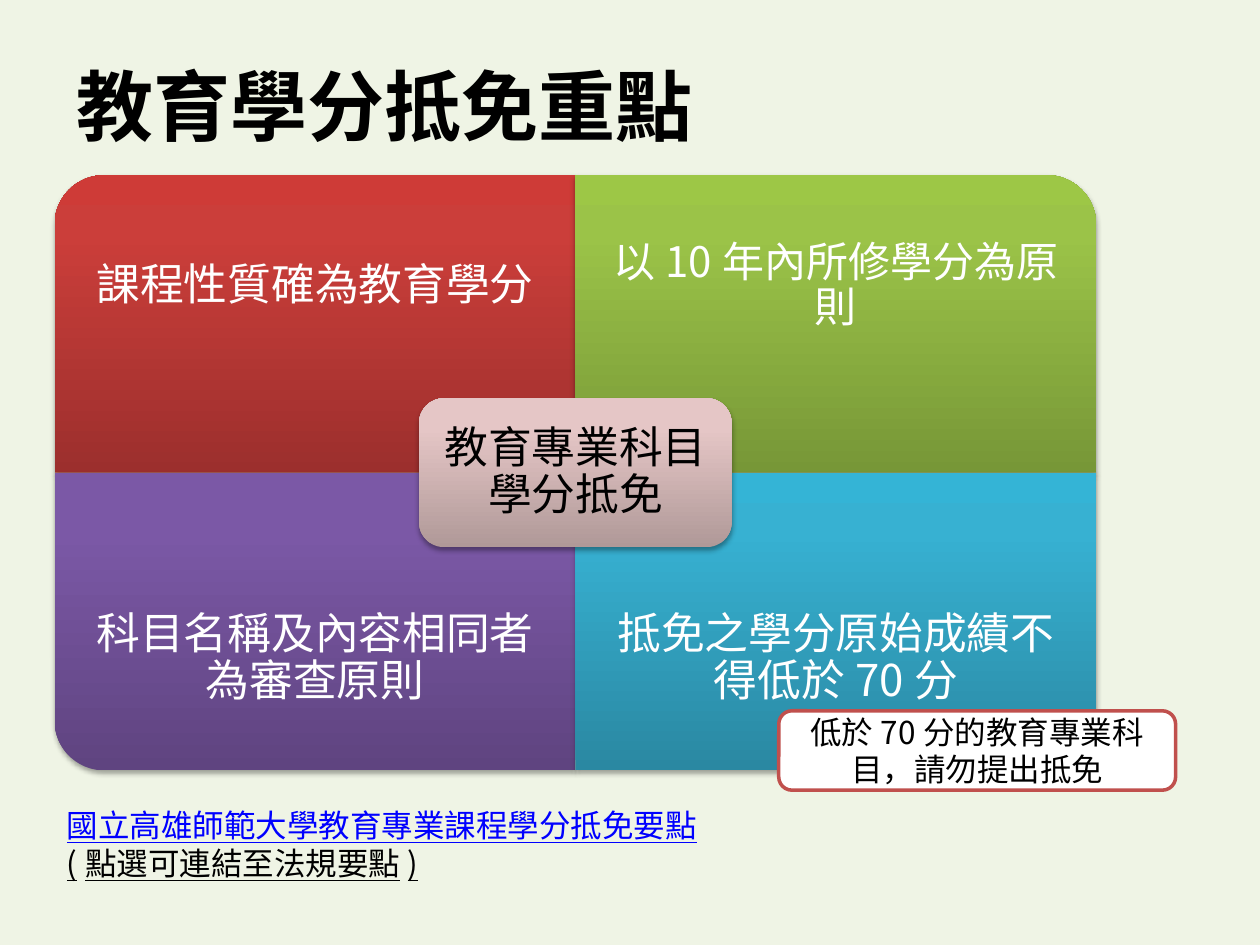
from lxml import etree
from pptx import Presentation
from pptx import util as u
from pptx.dml.color import RGBColor
from pptx.enum import shapes, text
from pptx.oxml import ns

FONT = "Noto Sans CJK SC"
COLORS = {
    "background": "EFF4E5", "black": "000000", "white": "FFFFFF",
    "link": "0000FF", "border": "C0504D",
}
GRADIENTS = {
    "red": ("9C2F2D", "CB3E3A", "CE3B37"),
    "green": ("779737", "9BC348", "9DC746"),
    "purple": ("5F4480", "7B58A6", "7C57A8"),
    "blue": ("2A88A2", "37B1D2", "34B4D6"),
    "pink": ("B09998", "E5C6C6", "E6C7C6"),
}
# text, gradient, column, row, rotation, font size
QUADRANTS = [
    ("課程性質確為教育學分", "red", 0, 0, 270, 25),
    ("以10年內所修學分為原則", "green", 1, 0, 0, 24),
    ("科目名稱及內容相同者為審查原則", "purple", 0, 1, 180, 25),
    ("抵免之學分原始成績不得低於70分", "blue", 1, 1, 90, 25),
]


def rgb(name):
    return RGBColor.from_string(COLORS[name])


def cm_box(*lengths):
    return [u.Cm(length) for length in lengths]


def write(shape, lines, color="black", align=text.PP_ALIGN.LEFT, spacing=1.0,
          inset=None, anchor=text.MSO_ANCHOR.MIDDLE, **font_format):
    """Fill a shape with one paragraph per (text, colour override, latin font)."""
    frame = shape.text_frame
    frame.word_wrap = True
    frame.vertical_anchor = anchor
    if inset is not None:
        for side in ("left", "top", "right", "bottom"):
            setattr(frame, f"margin_{side}", u.Cm(inset))
    for index, (words, own_color, latin) in enumerate(lines):
        paragraph = frame.add_paragraph() if index else frame.paragraphs[0]
        paragraph.alignment = align
        paragraph.line_spacing = spacing
        run = paragraph.add_run()
        run.text = words
        run.font.name = latin
        run.font.color.rgb = rgb(own_color or color)
        for name, value in font_format.items():
            setattr(run.font, name, value)
        east_asian = etree.Element(ns.qn("a:ea"), typeface=FONT)
        run.font._element.find(ns.qn("a:latin")).addnext(east_asian)


def add_label(slide, box, words, **options):
    label = slide.shapes.add_textbox(*cm_box(*box))
    write(label, [(words, None, FONT)], **options)


def add_glossy(slide, preset, box, gradient, rotation=0):
    """Add a shape with an upright gradient and a soft shadow below it."""
    shape = slide.shapes.add_shape(preset, *cm_box(*box))
    shape.rotation = rotation
    shape.line.fill.background()
    shape.shadow.inherit = False
    shape.fill.gradient()
    fill = shape._element.spPr.find(ns.qn("a:gradFill"))
    fill.set("rotWithShape", "0")
    stops = fill.find(ns.qn("a:gsLst"))
    for stop in list(stops):
        stops.remove(stop)
    for position, color in zip((0, 80000, 100000), GRADIENTS[gradient]):
        stop = etree.SubElement(stops, ns.qn("a:gs"), pos=str(position))
        etree.SubElement(stop, ns.qn("a:srgbClr"), val=color)
    shape.fill.gradient_angle = 90
    effects = shape._element.spPr.find(ns.qn("a:effectLst"))
    shadow = etree.SubElement(
        effects, ns.qn("a:outerShdw"), blurRad=str(u.Pt(3.1)),
        dist=str(u.Pt(1.8)), dir="5400000", rotWithShape="0")
    shade = etree.SubElement(shadow, ns.qn("a:srgbClr"), val=COLORS["black"])
    etree.SubElement(shade, ns.qn("a:alpha"), val="35000")


def add_matrix(slide, left, top, width, height):
    """Four quadrants, each rounded at its outer corner, and a centre card."""
    cell_width, cell_height = width / 2, height / 2
    label_height = cell_height * 0.75
    centered = {"align": text.PP_ALIGN.CENTER, "spacing": 0.9}
    for words, gradient, column, row, rotation, size in QUADRANTS:
        x, y = left + column * cell_width, top + row * cell_height
        shape_width, shape_height = cell_width, cell_height
        if rotation % 180:
            shape_width, shape_height = cell_height, cell_width
        box = (x + (cell_width - shape_width) / 2,
               y + (cell_height - shape_height) / 2, shape_width, shape_height)
        add_glossy(slide, shapes.MSO_SHAPE.ROUND_1_RECTANGLE, box, gradient, rotation)
        label_top = y + row * (cell_height - label_height)
        add_label(slide, (x, label_top, cell_width, label_height), words,
                  color="white", inset=0.49, size=u.Pt(size), **centered)

    card_width, card_height, edge = cell_width * 0.6, cell_height / 2, 0.14
    x, y = left + (width - card_width) / 2, top + (height - card_height) / 2
    add_glossy(slide, shapes.MSO_SHAPE.ROUNDED_RECTANGLE,
               (x, y, card_width, card_height), "pink")
    add_label(slide, (x + edge, y + edge, card_width - 2 * edge, card_height - 2 * edge),
              "教育專業科目學分抵免", inset=0.26, size=u.Pt(25), **centered)


def add_regulation(slide, *box):
    regulation = slide.shapes.add_textbox(*cm_box(*box))
    write(regulation, [("國立高雄師範大學教育專業課程學分抵免要點", "link", "Calibri"),
                       ("(點選可連結至法規要點)", None, FONT)],
          anchor=text.MSO_ANCHOR.TOP, size=u.Pt(18), underline=True)


def add_reminder(slide, *box):
    reminder = slide.shapes.add_shape(shapes.MSO_SHAPE.ROUNDED_RECTANGLE, *cm_box(*box))
    reminder.shadow.inherit = False
    reminder.fill.solid()
    reminder.fill.fore_color.rgb = rgb("white")
    reminder.line.color.rgb = rgb("border")
    reminder.line.width = u.Pt(2)
    write(reminder, [("低於70分的教育專業科目，請勿提出抵免", None, FONT)],
          align=text.PP_ALIGN.CENTER, size=u.Pt(18))


def main():
    presentation = Presentation()
    presentation.slide_width, presentation.slide_height = cm_box(25.4, 19.05)
    slide = presentation.slides.add_slide(presentation.slide_layouts[6])
    slide.background.fill.solid()
    slide.background.fill.fore_color.rgb = rgb("background")
    add_label(slide, (1.3, 0.53, 22.86, 3.18), "教育學分抵免重點",
              size=u.Pt(44), bold=True)
    add_matrix(slide, 1.1, 3.53, 21, 12)
    add_regulation(slide, 1.1, 16.13, 14, 1.8)
    add_reminder(slide, 15.7, 14.33, 8, 1.6)
    presentation.save("out.pptx")


if __name__ == "__main__":
    main()
